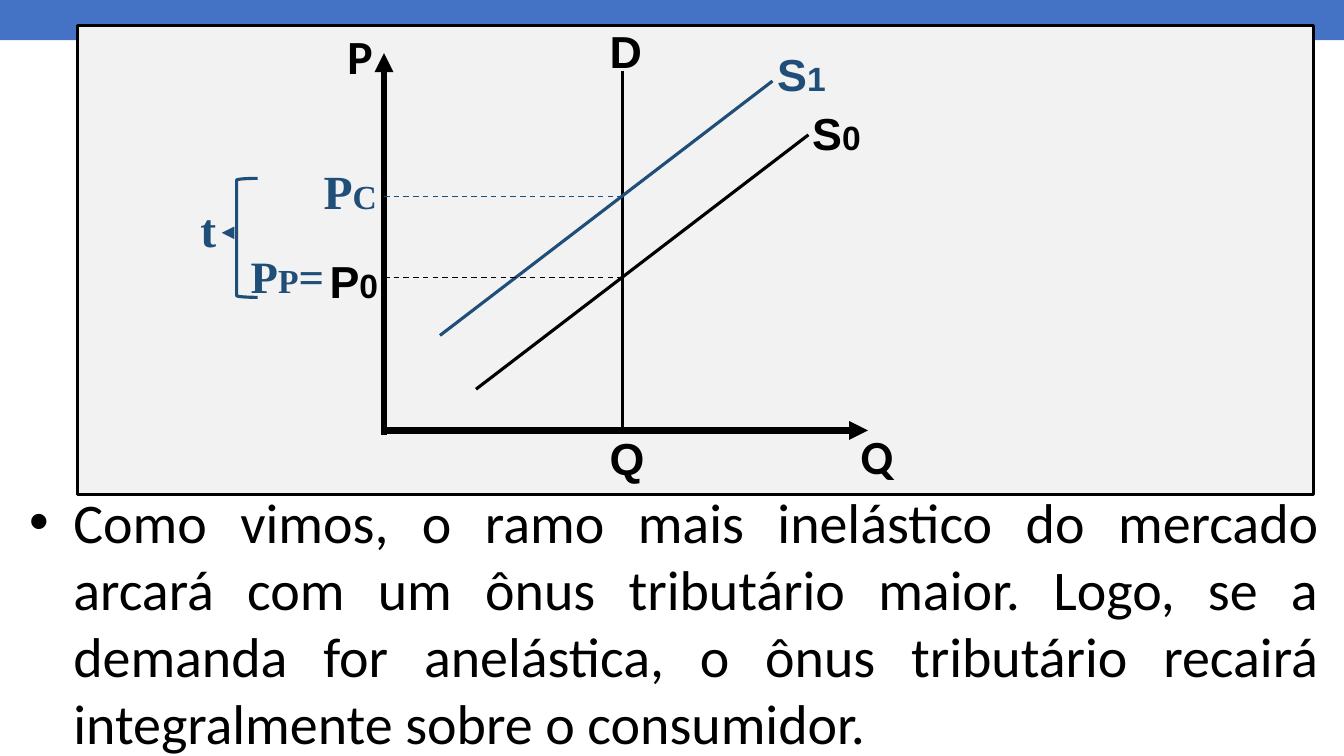
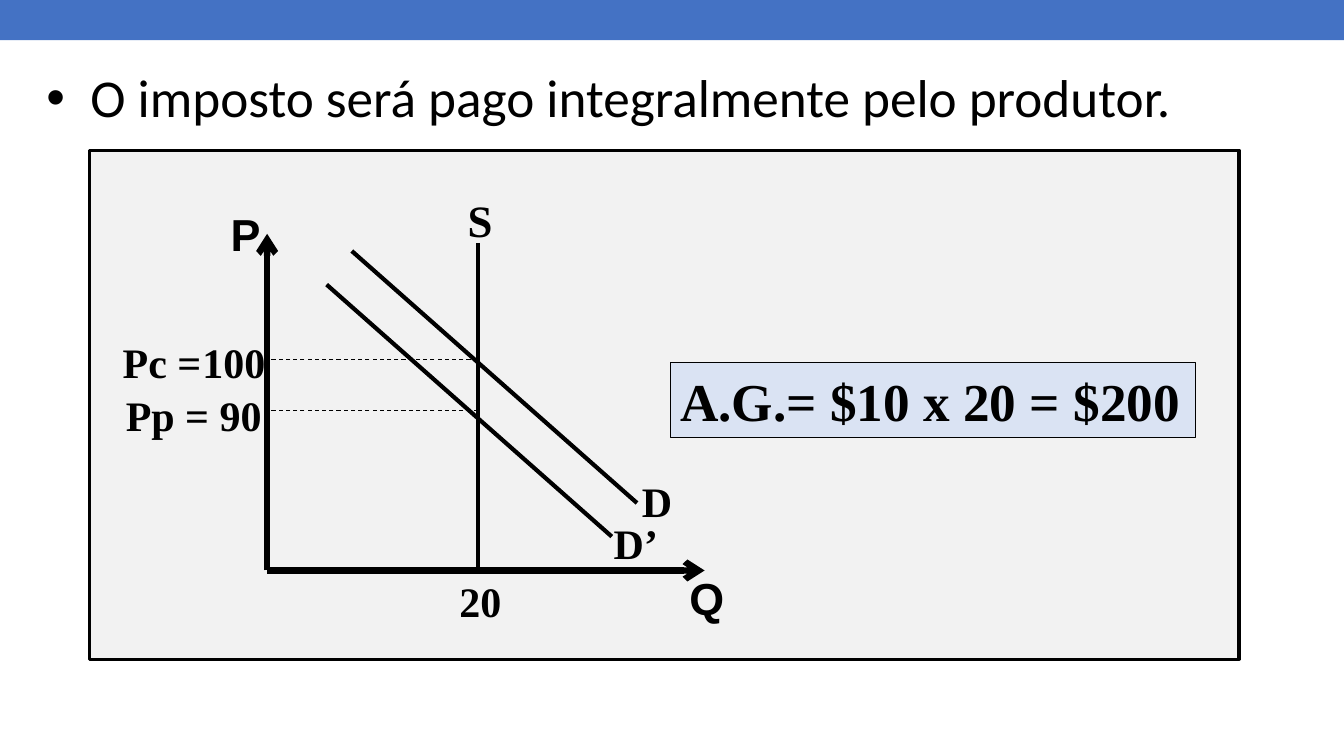
"""Build two slides on how a tax falls on inelastic demand and supply."""
from lxml.etree import SubElement
from pptx import Presentation
from pptx.dml.color import RGBColor as Rgb
from pptx.enum.dml import MSO_LINE as Dash
from pptx.enum.shapes import MSO_CONNECTOR as Connector, MSO_SHAPE as Shape
from pptx.enum.text import MSO_ANCHOR as Anchor, PP_ALIGN as Align
from pptx.oxml.ns import qn
from pptx.util import Pt

COLORS = {
    "band": "4472C4",
    "panel": "F2F2F2",
    "black": "000000",
    "tax": "1F4E79",
    "result": "DAE3F3",
}
SANS, SERIF, BODY = "Arial", "Times New Roman", "Calibri"
WIDTH, HEIGHT = 960, 540
BAND_HEIGHT = 28.8
BULLET_INDENT = 31.5


def color(name):
    """Return a palette colour."""
    return Rgb.from_string(COLORS[name])


def apply(target, values):
    """Set every attribute in values on target."""
    for name, value in values.items():
        setattr(target, name, value)


def add_spans(para, spans, font, tint="black", bold=True):
    """Fill a paragraph with (text, size) spans in one font."""
    for text, size in spans:
        span = para.add_run()
        span.text = text
        apply(span.font, {"name": font, "size": Pt(size), "bold": bold})
        span.font.color.rgb = color(tint)


def add_text(page, spot, spans, font, tint="black"):
    """Add a bold label."""
    box = page.shapes.add_textbox(*map(Pt, spot))
    box.text_frame.word_wrap = True
    add_spans(box.text_frame.paragraphs[0], spans, font, tint)


def add_bullet(page, spot, text, size, align=Align.LEFT):
    """Add the bulleted statement of a slide."""
    box = page.shapes.add_textbox(*map(Pt, spot))
    apply(box.text_frame, {"word_wrap": True, "margin_top": Pt(3), "margin_bottom": Pt(3),
                           "margin_left": Pt(6.5), "margin_right": Pt(6.5)})
    para = box.text_frame.paragraphs[0]
    props = para._p.get_or_add_pPr()
    props.set("marL", str(Pt(BULLET_INDENT)))
    props.set("indent", str(-Pt(BULLET_INDENT)))
    SubElement(props, qn("a:buFont")).set("typeface", SANS)
    SubElement(props, qn("a:buChar")).set("char", "•")
    para.alignment = align
    add_spans(para, [(text, size)], BODY, bold=False)


def add_shape(page, kind, spot, fill=None, line=None, weight=1):
    """Add a preset shape without shadow."""
    shape = page.shapes.add_shape(kind, *map(Pt, spot))
    shape.shadow.inherit = False
    if fill:
        shape.fill.solid()
        shape.fill.fore_color.rgb = color(fill)
    else:
        shape.fill.background()
    if line:
        shape.line.color.rgb = color(line)
        shape.line.width = Pt(weight)
    else:
        shape.line.fill.background()
    return shape


def add_line(page, start, end, weight, tint="black", dashed=False, head=None):
    """Add a straight line, with an arrowhead at its end if head is given."""
    line = page.shapes.add_connector(Connector.STRAIGHT, *map(Pt, (*start, *end)))
    line.line.color.rgb = color(tint)
    line.line.width = Pt(weight)
    if dashed:
        line.line.dash_style = Dash.DASH
    if head:
        SubElement(line.line._get_or_add_ln(), qn("a:tailEnd")).set("type", head)
    SubElement(line._element.spPr, qn("a:effectLst"))


def add_axes(page, origin, top, right, head, overlap=0):
    """Add the price and quantity axes."""
    x, y = origin
    add_line(page, (x, y + overlap), (x, top), 4.5, head=head)
    add_line(page, origin, (right, y), 4.5, head=head)


def shift(point, offset):
    """Move a point by an offset."""
    return tuple(a + b for a, b in zip(point, offset))


def add_page(deck, panel):
    """Add a blank slide with the top band and the chart panel."""
    page = deck.slides.add_slide(deck.slide_layouts[6])
    add_shape(page, Shape.RECTANGLE, (0, 0, WIDTH, BAND_HEIGHT), "band")
    add_shape(page, Shape.RECTANGLE, panel, "panel", "black", 2.25)
    return page


def add_demand_page(deck):
    """Show the tax borne by the consumer."""
    page = add_page(deck, (55.5, 18, 882.5, 335.5))
    add_bullet(page, (14.4, 345, 934, 81),
               "Como vimos, o ramo mais inelástico do mercado arcará com um ônus tributário "
               "maior. Logo, se a demanda for anelástica, o ônus tributário recairá "
               "integralmente sobre o consumidor.", 40, Align.JUSTIFY)
    axis, base, quantity = 274.3, 307.5, 444.7
    start, end, tax = (340, 278), (577.5, 96.3), (-25.7, -38.4)
    add_axes(page, (axis, base), 38, 620, "triangle", 3)
    add_line(page, (quantity, 50.5), (quantity, base), 2.25)
    add_line(page, start, end, 2.25)
    add_line(page, shift(start, tax), shift(end, tax), 2.25, "tax")
    for price, tint in ((198, "black"), (140.4, "tax")):
        add_line(page, (axis, price), (quantity, price), 1, tint, dashed=True)

    add_shape(page, Shape.LEFT_BRACKET, (169, 127.4, 15, 85), line="tax", weight=2.25)
    add_line(page, (162.7, 166.3), (158.4, 166.3), 3, "tax", head="triangle")
    labels = [
        ((241, 16, 35.5, 48), [("P", 34)], BODY, "black"),
        ((607.7, 301.7, 35.5, 48), [("Q", 34)], BODY, "black"),
        ((573, 72, 53.5, 46), [("S", 32), ("0", 24)], SANS, "black"),
        ((228.3, 178, 54, 46), [("P", 32), ("0", 24)], SANS, "black"),
        ((428.4, 13.7, 46, 46), [("D", 32)], SANS, "black"),
        ((428.4, 304, 46, 46), [("Q", 32)], SANS, "black"),
        ((548, 29.5, 53.5, 46), [("S", 32), ("1", 24)], SANS, "tax"),
        ((172, 174.2, 77, 46), [("P", 32), ("P", 24), ("=", 32)], SERIF, "tax"),
        ((224, 112.3, 65.5, 48), [("P", 34), ("C", 24)], SERIF, "tax"),
        ((136, 139, 30.5, 48), [("t", 34)], SERIF, "tax"),
    ]
    for label in labels:
        add_text(page, *label)


def add_supply_page(deck):
    """Show the tax borne by the producer."""
    page = add_page(deck, (64, 107.3, 821, 363.6))
    add_bullet(page, (26.6, 43.2, 903, 54),
               "O imposto será pago integralmente pelo produtor.", 38)
    axis, base, quantity = 190.8, 407.5, 341.3
    start, end, tax = (251.3, 179.3), (455, 359.3), (-18, 24)
    add_axes(page, (axis, base), 167, 503.3, "arrow")
    add_line(page, (quantity, 173.5), (quantity, base), 3)
    add_line(page, start, end, 3)
    add_line(page, shift(start, tax), shift(end, tax), 3)
    for price in (257, 293):
        add_line(page, (quantity, price), (axis, price), 0.75, dashed=True)

    labels = [
        ((157.7, 144, 30.5, 46), "P", 32, SANS),
        ((485.3, 404, 30.5, 46), "Q", 32, SANS),
        ((327, 134, 30.5, 46), "S", 32, SERIF),
        ((451.4, 336.2, 30.5, 44), "D", 30, SERIF),
        ((431.3, 365.8, 48.5, 44), "D’", 30, SERIF),
        ((321, 407.5, 60, 44), "20", 30, SERIF),
        ((137.5, 237, 60, 44), "100", 30, SERIF),
        ((80.6, 237, 74, 44), "Pc =", 30, SERIF),
        ((82.8, 275, 124, 44), "Pp = 90", 30, SERIF),
    ]
    for spot, text, size, font in labels:
        add_text(page, spot, [(text, size)], font)

    result = add_shape(page, Shape.RECTANGLE, (478.8, 259.2, 375.5, 53.3),
                       "result", "black", 0.75)
    apply(result.text_frame, {"word_wrap": True, "vertical_anchor": Anchor.TOP})
    para = result.text_frame.paragraphs[0]
    para.alignment = Align.LEFT
    add_spans(para, [("A.G.= $10 x 20 = $200", 38)], SERIF)


def main():
    """Build and save the deck."""
    deck = Presentation()
    apply(deck, {"slide_width": Pt(WIDTH), "slide_height": Pt(HEIGHT)})
    add_demand_page(deck)
    add_supply_page(deck)
    deck.save("out.pptx")


if __name__ == "__main__":
    main()
